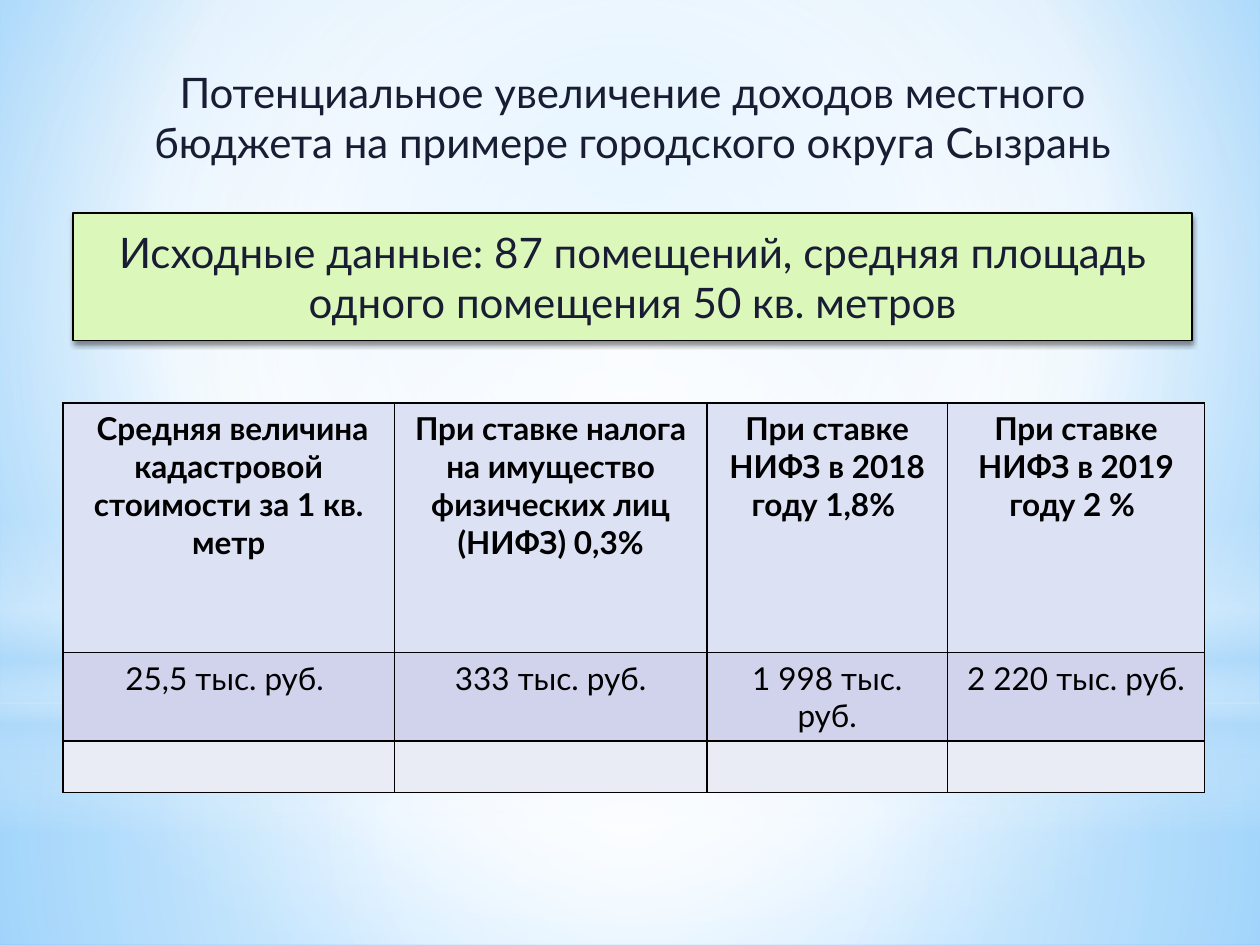
from dataclasses import dataclass
from typing import NamedTuple

from lxml import etree
from pptx import Presentation
from pptx.dml.color import RGBColor
from pptx.enum.shapes import MSO_SHAPE
from pptx.enum.text import MSO_ANCHOR, PP_ALIGN
from pptx.oxml import parse_xml
from pptx.util import Inches, Pt

RECT, OVAL = MSO_SHAPE.RECTANGLE, MSO_SHAPE.OVAL
CENTER, MIDDLE = PP_ALIGN.CENTER, MSO_ANCHOR.MIDDLE
NS = "http://schemas.openxmlformats.org/drawingml/2006/main"


@dataclass(frozen=True)
class Theme:
    font: str = "Lato"
    heading_size: int = 24
    table_size: int = 18
    ink: str = "191D34"
    black: str = "000000"
    white: str = "FFFFFF"
    sky: str = "B4DCFA"
    bg_inner: str = "9ED5FF"
    bg_outer: str = "5BB9FF"
    panel: str = "DCF7BA"
    rows: tuple[str, ...] = ("DCE1F4", "D0D3EB", "E9EBF5")


T = Theme()


class Box(NamedTuple):
    left: float
    top: float
    width: float
    height: float

    def emu(self) -> list:
        return [Inches(v) for v in self]


class Stop(NamedTuple):
    pos: int
    color: str
    alpha: int = 100


class Gradient(NamedTuple):
    stops: list[Stop]
    focus: tuple[int, ...] = (50, 50, 50, 50)
    linear: bool = False


class Glow(NamedTuple):
    kind: int
    box: Box
    gradient: Gradient


BACKGROUND = Gradient(
    [Stop(0, T.bg_inner), Stop(60, T.white), Stop(100, T.bg_outer)], (20, 10, 20, 60))
GLOWS = [
    Glow(RECT, Box(0, 5.58, 10, 1.92), Gradient(
        [Stop(0, T.white, 91), Stop(37, T.white, 76), Stop(100, T.sky, 79)])),
    Glow(RECT, Box(0, 0, 10, 5.58), Gradient(
        [Stop(0, T.white, 89), Stop(48, T.white, 62), Stop(100, T.sky, 79)])),
    Glow(RECT, Box(0, 4.12, 10, 2.5), Gradient(
        [Stop(0, T.white, 0), Stop(29, T.white, 30), Stop(45, T.sky, 40),
         Stop(55, T.white, 26), Stop(65, T.sky, 60), Stop(100, T.white, 0)], linear=True)),
    Glow(OVAL, Box(0, 1.75, 10, 5.58), Gradient([Stop(0, T.white), Stop(56, T.white, 0)])),
]
TITLE = "Потенциальное увеличение доходов местного бюджета на примере городского округа Сызрань"
INPUTS = "Исходные данные: 87 помещений, средняя площадь одного помещения 50 кв. метров"
COLUMNS = [2.63, 2.48, 1.91, 2.04]
ROWS = [1.98, 0.69, 0.41]
CELLS = [
    [" Средняя величина кадастровой стоимости за 1 кв. метр",
     "При ставке налога на имущество физических лиц (НИФЗ) 0,3%",
     "При ставке НИФЗ в 2018 году 1,8% ",
     "При ставке НИФЗ в 2019 году 2 % "],
    ["25,5 тыс. руб. ", "333 тыс. руб.", "1 998 тыс. руб.", "2 220 тыс. руб."],
    [""] * len(COLUMNS),
]


def rgb(color: str) -> RGBColor:
    return RGBColor.from_string(color)


def set_gradient(fill, element, gradient: Gradient) -> None:
    fill.solid()
    stops = "".join(
        f'<a:gs pos="{g.pos * 1000}"><a:srgbClr val="{g.color}">'
        f'<a:alpha val="{g.alpha * 1000}"/></a:srgbClr></a:gs>' for g in gradient.stops)
    l, t, r, b = (v * 1000 for v in gradient.focus)
    shade = ('<a:lin ang="5400000" scaled="0"/>' if gradient.linear else
             f'<a:path path="circle"><a:fillToRect l="{l}" t="{t}" r="{r}" b="{b}"/></a:path>')
    solid = element.xpath(".//a:solidFill")[0]
    solid.getparent().replace(solid, parse_xml(
        f'<a:gradFill xmlns:a="{NS}" rotWithShape="1"><a:gsLst>{stops}</a:gsLst>{shade}</a:gradFill>'))


def shadow() -> etree._Element:
    return parse_xml(
        f'<a:effectLst xmlns:a="{NS}"><a:outerShdw blurRad="{Pt(3.1)}" dist="{Pt(1.8)}" '
        f'dir="5400000" algn="ctr" rotWithShape="0"><a:srgbClr val="{T.black}">'
        '<a:alpha val="45000"/></a:srgbClr></a:outerShdw></a:effectLst>')


def add_run(p, text: str, size: int, color: str, bold: bool = False):
    p.alignment = CENTER
    r = p.add_run()
    r.text = text
    r.font.size, r.font.bold = Pt(size), bold
    r.font.color.rgb = rgb(color)
    r.font.name = T.font
    return r


def add_heading(sp, text: str):
    tf = sp.text_frame
    tf.word_wrap = True
    tf.vertical_anchor = MIDDLE
    return add_run(tf.paragraphs[0], text, T.heading_size, T.ink)


def add_glow(s, glow: Glow) -> None:
    sp = s.shapes.add_shape(glow.kind, *glow.box.emu())
    sp.shadow.inherit = False
    sp.line.fill.background()
    set_gradient(sp.fill, sp._element.spPr, glow.gradient)


def add_title(s, box: Box) -> None:
    r = add_heading(s.shapes.add_textbox(*box.emu()), TITLE)
    r.font._element.find(f"{{{NS}}}solidFill").addnext(shadow())


def add_panel(s, box: Box) -> None:
    sp = s.shapes.add_shape(RECT, *box.emu())
    sp.fill.solid()
    sp.fill.fore_color.rgb = rgb(T.panel)
    sp.line.color.rgb = rgb(T.black)
    sp.line.width = Pt(0.75)
    sp._element.spPr.append(shadow())
    add_heading(sp, INPUTS)


def style_cell(cell, color: str) -> None:
    tcPr = cell._tc.get_or_add_tcPr()
    for side in ("lnL", "lnR", "lnT", "lnB"):
        tcPr.append(parse_xml(
            f'<a:{side} xmlns:a="{NS}" w="{Pt(1)}"><a:solidFill>'
            f'<a:srgbClr val="{T.black}"/></a:solidFill></a:{side}>'))
    cell.fill.solid()
    cell.fill.fore_color.rgb = rgb(color)


def add_tax_table(s, left: float, top: float) -> None:
    box = Box(left, top, sum(COLUMNS), sum(ROWS))
    table = s.shapes.add_table(len(ROWS), len(COLUMNS), *box.emu()).table
    table.first_row = table.horz_banding = False
    for column, width in zip(table.columns, COLUMNS):
        column.width = Inches(width)
    for i, (row, height, texts) in enumerate(zip(table.rows, ROWS, CELLS)):
        row.height = Inches(height)
        for cell, text in zip(row.cells, texts):
            style_cell(cell, T.rows[i])
            if text:
                add_run(cell.text_frame.paragraphs[0], text, T.table_size, T.black, i == 0)


def main() -> None:
    prs = Presentation()
    prs.slide_width, prs.slide_height = Inches(10), Inches(7.5)
    s = prs.slides.add_slide(prs.slide_layouts[6])
    set_gradient(s.background.fill, s._element, BACKGROUND)
    for glow in GLOWS:
        add_glow(s, glow)
    add_tax_table(s, 0.5, 3.2)
    add_title(s, Box(0.58, 0.42, 8.88, 1.01))
    add_panel(s, Box(0.58, 1.69, 8.88, 1.01))
    prs.save("out.pptx")


if __name__ == "__main__":
    main()
